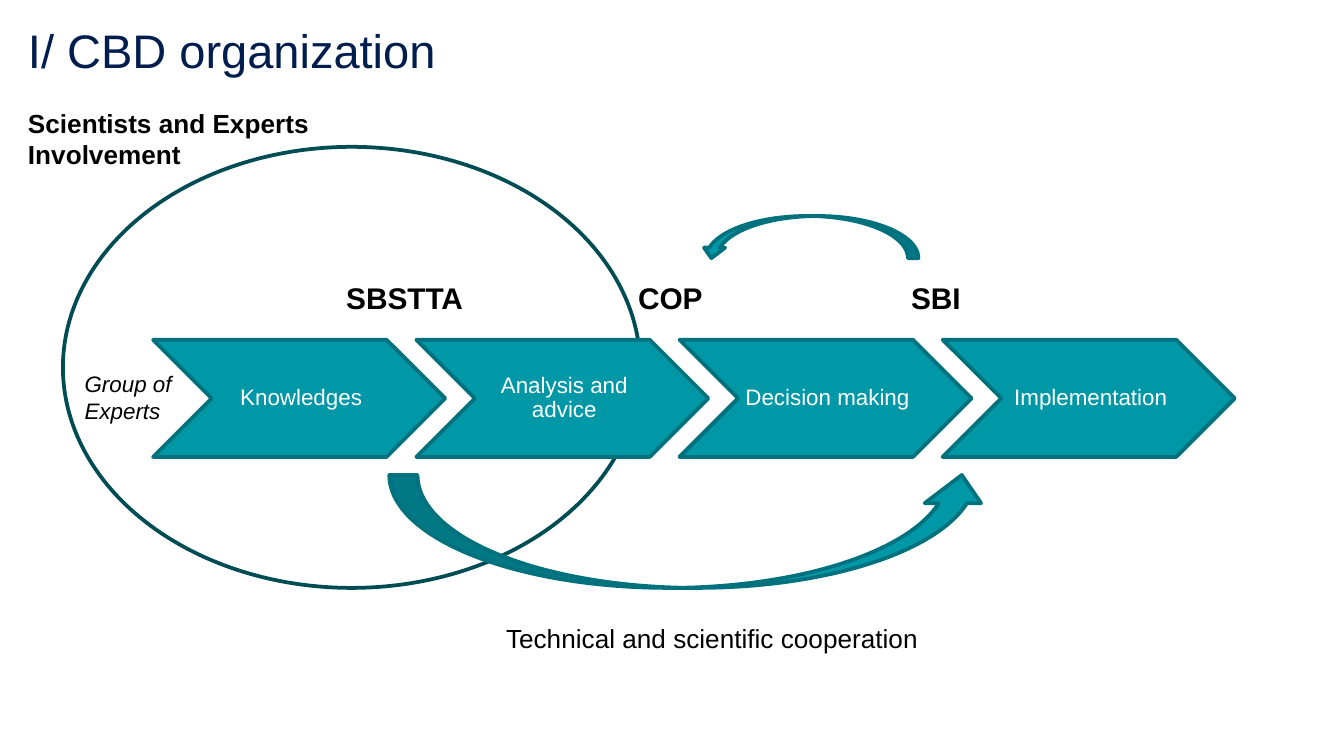
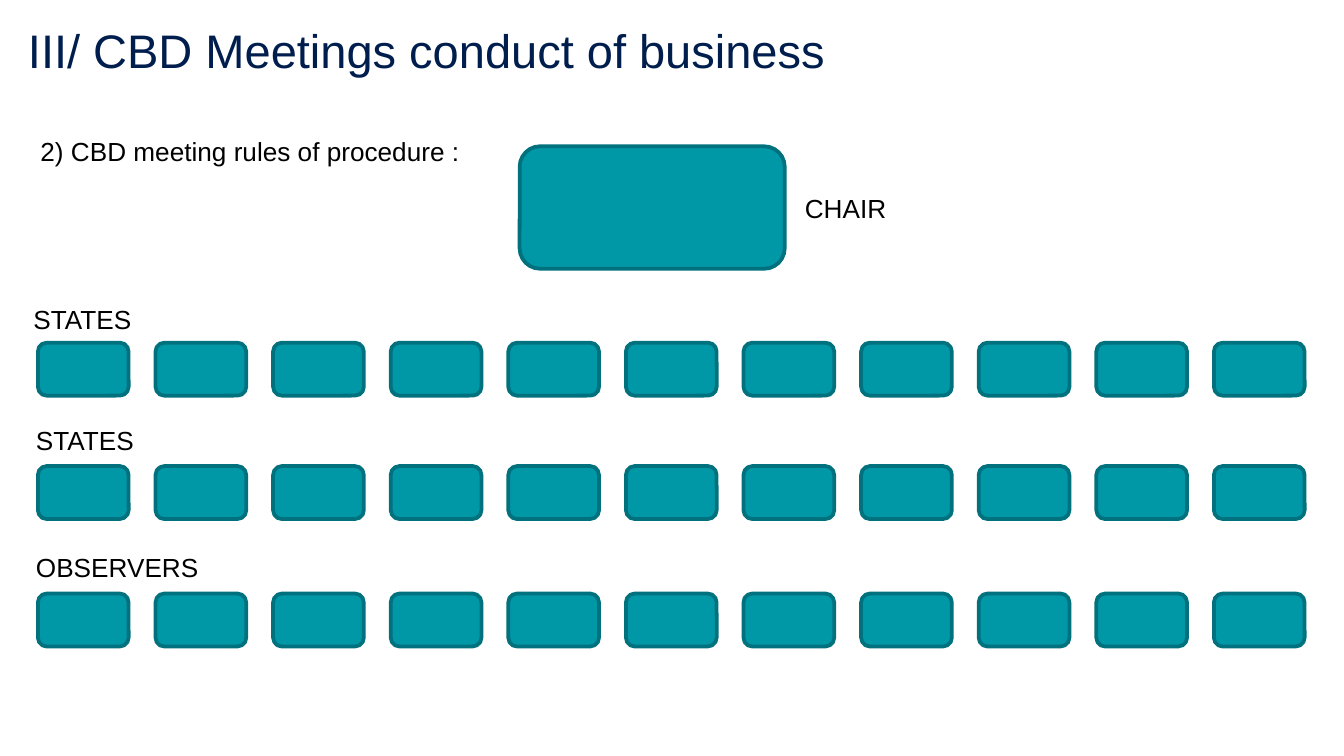
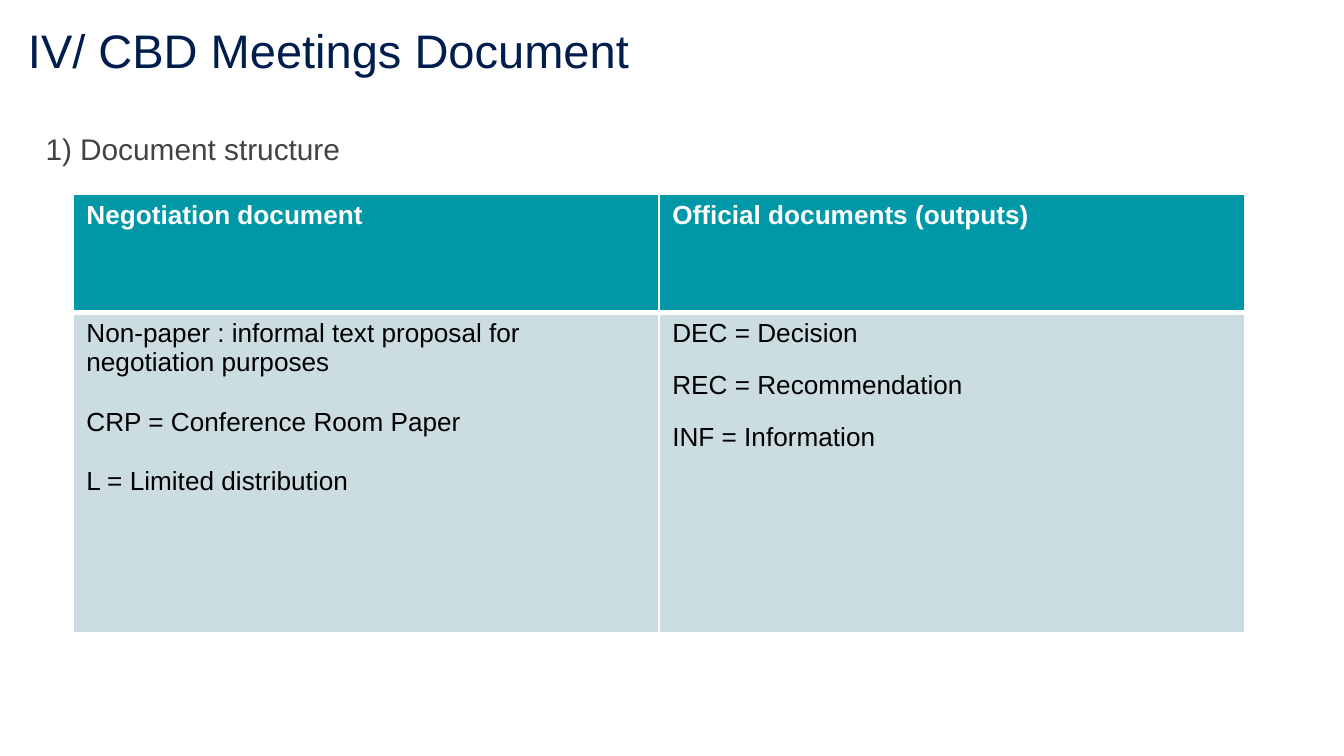
from dataclasses import dataclass

from lxml import etree
from pptx import Presentation
from pptx.dml.color import RGBColor
from pptx.enum.shapes import MSO_SHAPE
from pptx.enum.text import MSO_ANCHOR, MSO_AUTO_SIZE, PP_ALIGN
from pptx.oxml.ns import qn
from pptx.util import Pt

CHEVRON = MSO_SHAPE.CHEVRON
CURVED_ARROW = MSO_SHAPE.CURVED_UP_ARROW
ELLIPSE = MSO_SHAPE.OVAL
SEAT = MSO_SHAPE.ROUNDED_RECTANGLE
TOP, MIDDLE = MSO_ANCHOR.TOP, MSO_ANCHOR.MIDDLE
FIT_TEXT = MSO_AUTO_SIZE.SHAPE_TO_FIT_TEXT
CENTER = PP_ALIGN.CENTER


@dataclass(frozen=True)
class Theme:
    font: str = "Arial"
    title: str = "001E4D"
    text: str = "000000"
    heading: str = "434343"
    light: str = "FFFFFF"
    teal: str = "0097A7"
    teal_edge: str = "00717D"
    circle_edge: str = "004C54"
    table_body: str = "CCDDE1"
    title_size: float = 25.2
    large: float = 16
    normal: float = 14
    small: float = 12
    edge_width: float = 2


THEME = Theme()


def style_font(font, size, color, bold=False, italic=False):
    font.name = THEME.font
    font.size = Pt(size)
    font.color.rgb = RGBColor.from_string(color)
    font.bold = bold
    font.italic = italic


def add_text(shapes, box, text, size=THEME.normal, color=THEME.text,
             bold=False, italic=False, insets=(7.2, 3.6, 7.2, 3.6), grow=True):
    """Add a wrapped one-paragraph text box and return its frame."""
    frame = shapes.add_textbox(*map(Pt, box)).text_frame
    frame.word_wrap = True
    frame.vertical_anchor = TOP
    if grow:
        frame.auto_size = FIT_TEXT
    (frame.margin_left, frame.margin_top,
     frame.margin_right, frame.margin_bottom) = map(Pt, insets)
    paragraph = frame.paragraphs[0]
    paragraph.text = text
    style_font(paragraph.font, size, color, bold, italic)
    return frame


def add_figure(shapes, kind, box, fill=THEME.teal, edge=THEME.teal_edge):
    figure = shapes.add_shape(kind, *map(Pt, box))
    figure.shadow.inherit = False
    if fill:
        figure.fill.solid()
        figure.fill.fore_color.rgb = RGBColor.from_string(fill)
    else:
        figure.fill.background()
    figure.line.color.rgb = RGBColor.from_string(edge)
    figure.line.width = Pt(THEME.edge_width)
    return figure


def add_titled_slide(deck, title):
    slide = deck.slides.add_slide(deck.slide_layouts[6])
    add_text(slide.shapes, (7.9, 4.3, 671, 45.4), title, THEME.title_size,
             THEME.title, insets=(7.2,) * 4, grow=False)
    return slide.shapes


def add_process(shapes, steps):
    """Add a row of equally spaced chevrons with centred labels."""
    left, top, width, height, pitch = 82, 182, 156.5, 62.8, 141
    process = shapes.add_group_shape().shapes
    for index, step in enumerate(steps):
        x = left + index * pitch
        add_figure(process, CHEVRON, (x, top, width, height))
        label = add_text(process, (x + 31.3, top, 93.9, height), step,
                         THEME.small, THEME.light,
                         insets=(3.6, 1.44, 1.44, 1.44), grow=False)
        label.vertical_anchor = MIDDLE
        label.paragraphs[0].alignment = CENTER
        label.paragraphs[0].line_spacing = 0.9


def add_seat_row(shapes, top, seats=11):
    for seat in range(seats):
        add_figure(shapes, SEAT, (20.3 + seat * 63, top, 48.6, 28.4))


def set_borders(cell, **widths):
    """Draw white cell borders, 1 pt wide unless a side is given."""
    properties = cell._tc.get_or_add_tcPr()
    for position, side in enumerate("LRTB"):
        line = etree.Element(qn(f"a:ln{side}"), w=str(Pt(widths.get(side, 1))))
        fill = etree.SubElement(line, qn("a:solidFill"))
        etree.SubElement(fill, qn("a:srgbClr"), val=THEME.light)
        properties.insert(position, line)


def fill_cell(cell, lines, fill, color, bold=False, before=0, after=0):
    cell.fill.solid()
    cell.fill.fore_color.rgb = RGBColor.from_string(fill)
    frame = cell.text_frame
    frame.text = "\n".join(lines)
    for index, paragraph in enumerate(frame.paragraphs):
        style_font(paragraph.font, THEME.normal, color, bold)
        paragraph.space_before = Pt(before if index else 0)
        paragraph.space_after = Pt(after)


def add_document_table(shapes, columns):
    """Add a two-row table from (heading, lines, space before, space after)."""
    table = shapes.add_table(2, len(columns), Pt(39.1), Pt(103.8),
                             Pt(627.8), Pt(235)).table
    table.rows[0].height, table.rows[1].height = Pt(63.4), Pt(171.6)
    for index, (heading, lines, before, after) in enumerate(columns):
        table.columns[index].width = Pt(313.9)
        head, body = table.cell(0, index), table.cell(1, index)
        fill_cell(head, [heading], THEME.teal, THEME.light, bold=True)
        set_borders(head, B=3)
        fill_cell(body, lines, THEME.table_body, THEME.text,
                  before=before, after=after)
        set_borders(body, T=3)


def build_organization(deck):
    shapes = add_titled_slide(deck, "I/ CBD organization")
    add_figure(shapes, ELLIPSE, (33.7, 78.7, 309.3, 236.3),
               fill=None, edge=THEME.circle_edge)
    add_process(shapes, ["Knowledges", "Analysis and advice",
                         "Decision making", "Implementation"])
    for body, left, width in [("SBSTTA", 178.4, 91.4), ("COP", 334.8, 81.4),
                              ("SBI", 481, 81.4)]:
        add_text(shapes, (left, 146.2, width, 26.6), body, THEME.large, bold=True)
    add_figure(shapes, CURVED_ARROW, (208.6, 254.5, 321.8, 60.5))
    add_text(shapes, (264, 329.8, 248, 24.5),
             "Technical and scientific cooperation")
    feedback = add_figure(shapes, CURVED_ARROW, (375.4, 115.7, 116.6, 22.6))
    feedback.rotation = 180
    add_text(shapes, (7.9, 54, 203, 41),
             "Scientists and Experts Involvement", bold=True)
    add_text(shapes, (38.2, 195, 66.2, 36), "Group of Experts",
             THEME.small, italic=True)


def build_meeting_room(deck):
    shapes = add_titled_slide(deck, "III/ CBD Meetings conduct of business")
    add_figure(shapes, SEAT, (278.4, 78.4, 142, 65.6))
    for seat_top in (183.6, 249.7, 318):
        add_seat_row(shapes, seat_top)
    for label, left, top, width in [
        ("STATES", 10.8, 159.1, 412),
        ("STATES", 12.2, 223.9, 412),
        ("OBSERVERS", 12.2, 291.6, 412),
        ("CHAIR", 424.1, 99.4, 67.7),
        ("2) CBD meeting rules of procedure :", 14.6, 68.9, 360),
    ]:
        add_text(shapes, (left, top, width, 24.5), label)


def build_documents(deck):
    shapes = add_titled_slide(deck, "IV/ CBD Meetings Document")
    heading = add_text(shapes, (17.3, 59.8, 671, 269.3), "1) Document structure",
                       THEME.large, THEME.heading, insets=(7.2,) * 4, grow=False)
    heading.paragraphs[0].line_spacing = 1.15
    add_document_table(shapes, [
        ("Negotiation document",
         ["Non-paper : informal text proposal for negotiation purposes",
          "CRP = Conference Room Paper",
          "L = Limited distribution"], 16, 0),
        ("Official documents (outputs)",
         ["DEC = Decision", "REC = Recommendation", "INF = Information"], 0, 12),
    ])


def main():
    deck = Presentation()
    deck.slide_width, deck.slide_height = Pt(720), Pt(405)
    build_organization(deck)
    build_meeting_room(deck)
    build_documents(deck)
    deck.save("out.pptx")


if __name__ == "__main__":
    main()
